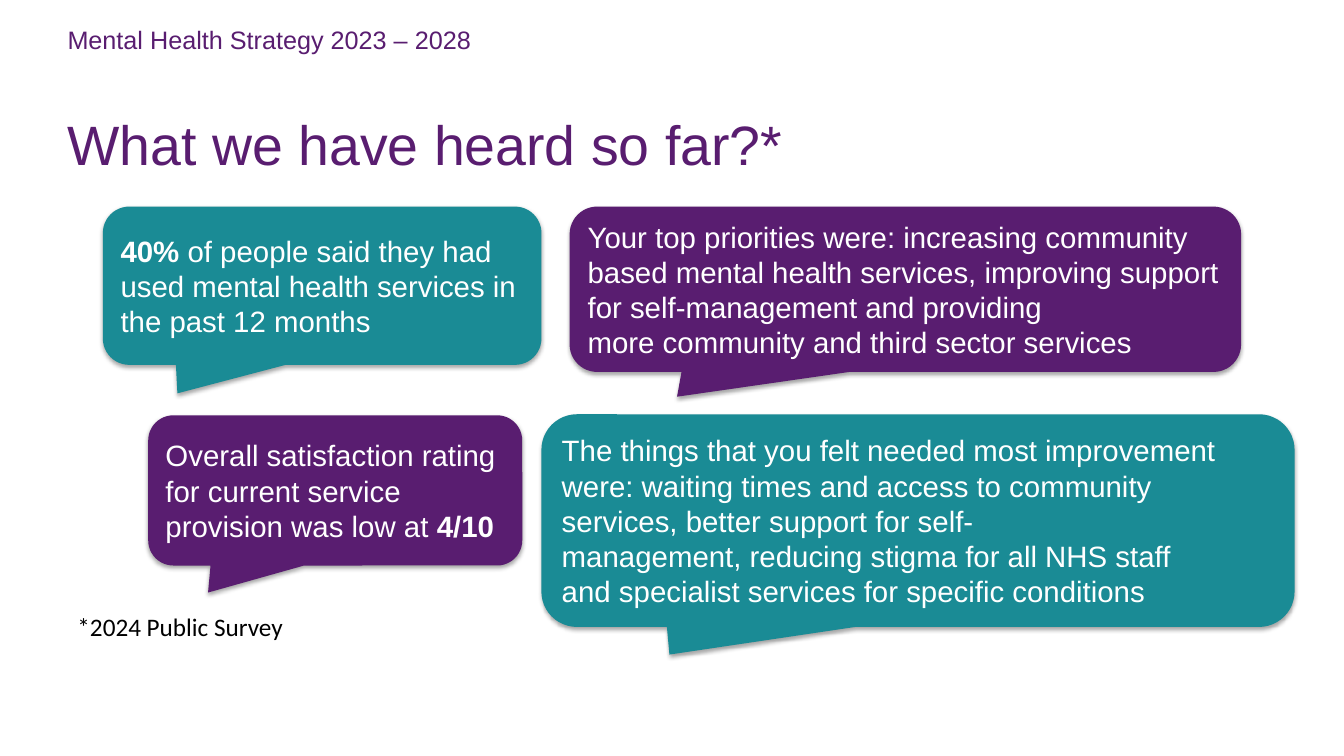
from dataclasses import dataclass

from lxml import etree
from pptx import Presentation
from pptx.dml.color import RGBColor
from pptx.enum import shapes, text
from pptx.oxml.ns import qn
from pptx.util import Inches, Pt


@dataclass(frozen=True)
class Theme:
    plum: str = "591D70"
    teal: str = "1A8B95"
    white: str = "FFFFFF"
    black: str = "000000"
    font: str = "Arial"
    note_font: str = "Calibri"
    title: float = 39.6
    body: float = 21
    small: float = 18


T = Theme()

# Content: "~" marks a non-breaking space, each run is (words, bold)
HEAD = "Mental Health Strategy 2023 – 2028"
TITLE = "What we have heard so far?*"
NOTE = "*2024 Public Survey"
QUOTES = [  # box, tail offset, fill, runs
    ((5.37, 4.11, 7.47, 2.11), (-0.33, 0.63), T.teal, [
        ("The things that you~felt needed most improvement were:~waiting "
         "times and~access to community services,~better support~for "
         "self-management,~reducing stigma~for~all NHS staff "
         "and~specialist services~for specific conditions", False)]),
    ((1.47, 4.12, 3.71, 1.49), (-0.34, 0.68), T.plum, [
        ("Overall satisfaction rating for current~service provision "
         "was low at~", False), ("4/10", True)]),
    ((5.65, 2.05, 6.66, 1.64), (-0.34, 0.65), T.plum, [
        ("Your~top priorities were: increasing community based mental "
         "health~services, improving support for self-management and "
         "providing more~community and third sector services", False)]),
    ((1.02, 2.05, 4.35, 1.57), (-0.33, 0.68), T.teal, [
        ("40% ", True),
        ("of~people said they had used mental health services~in the "
         "past 12~months", False)]),
]


def write(shape, runs, size, color, font=T.font, anchor="TOP", left=0.1):
    """Fill a shape with one left-aligned paragraph."""
    frame = shape.text_frame
    frame.word_wrap = True
    frame.auto_size = text.MSO_AUTO_SIZE.NONE
    frame.vertical_anchor = text.MSO_ANCHOR[anchor]
    frame.margin_left = Inches(left)
    para = frame.paragraphs[0]
    para.alignment = text.PP_ALIGN.LEFT
    for words, bold in runs:
        run = para.add_run()
        run.text = words.replace("~", chr(160))
        run.font.name = font
        run.font.size = Pt(size)
        run.font.bold = bold
        run.font.color.rgb = RGBColor.from_string(color)
    return para


def paint(shape, color):
    shape.fill.solid()
    shape.fill.fore_color.rgb = RGBColor.from_string(color)
    shape.line.fill.background()


def shade(shape):
    """Give a shape a soft shadow straight below it."""
    shape.shadow.inherit = False
    glow = shape._element.spPr.find(qn("a:effectLst"))
    outer = etree.SubElement(glow, qn("a:outerShdw"), blurRad=str(Pt(3.1)),
                             dist=str(Pt(1.8)), dir="5400000",
                             rotWithShape="0")
    tint = etree.SubElement(outer, qn("a:srgbClr"), val=T.black)
    etree.SubElement(tint, qn("a:alpha"), val="35000")


def main():
    deck = Presentation()
    deck.slide_width, deck.slide_height = Inches(13.33), Inches(7.5)
    slide = deck.slides.add_slide(deck.slide_layouts[5])

    # Header and title
    head = slide.shapes.add_textbox(*map(Inches, (0.67, 0.17, 9.84, 0.6)))
    paint(head, T.white)
    para = write(head, [(HEAD, False)], T.small, T.plum, left=0)
    para.line_spacing = 1.07
    para.space_after = Pt(8)

    title = slide.shapes.title
    title.left, title.top, title.width, title.height = map(
        Inches, (0.67, 0.8, 12, 1.25))
    write(title, [(TITLE, False)], T.title, T.plum, anchor="MIDDLE", left=0)

    # Speech bubbles
    for box, tail, fill, runs in QUOTES:
        bubble = slide.shapes.add_shape(
            shapes.MSO_SHAPE.ROUNDED_RECTANGULAR_CALLOUT, *map(Inches, box))
        for i, value in enumerate((*tail, 0.167)):
            bubble.adjustments[i] = value
        paint(bubble, fill)
        shade(bubble)
        write(bubble, runs, T.body, T.white, anchor="MIDDLE")

    # Footnote
    note = slide.shapes.add_textbox(*map(Inches, (0.67, 6.02, 2.53, 0.4)))
    write(note, [(NOTE, False)], T.small, T.black, font=T.note_font)

    deck.save("out.pptx")


if __name__ == "__main__":
    main()
